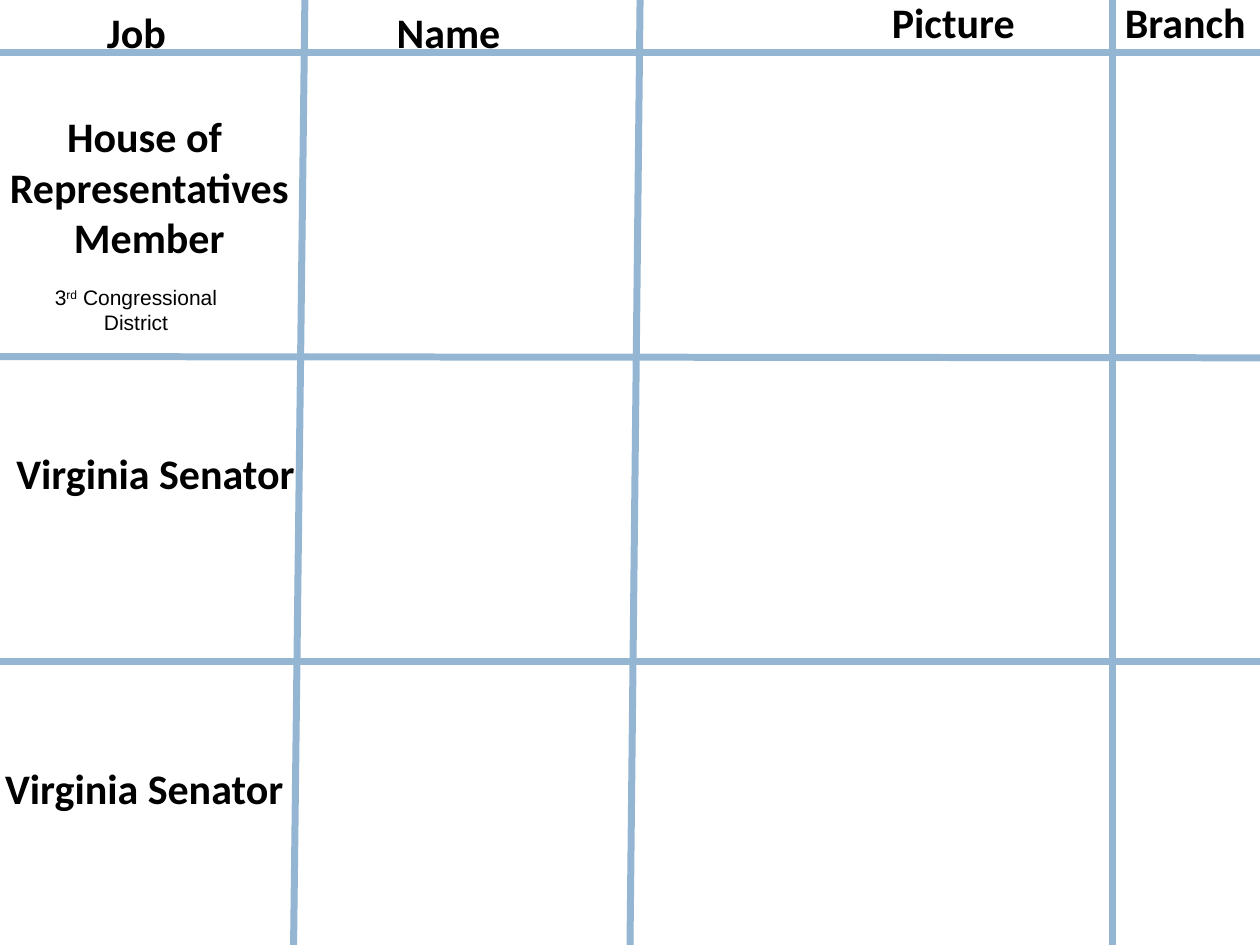
import pptx
import pptx.dml.color
import pptx.enum.shapes
import pptx.enum.text
import pptx.oxml.ns
import pptx.util
from lxml import etree

Inches = pptx.util.Inches
BLACK = pptx.dml.color.RGBColor(0x00, 0x00, 0x00)
BLUE = pptx.dml.color.RGBColor(0x94, 0xB6, 0xD2)
LEFT = pptx.enum.text.PP_ALIGN.LEFT
CENTER = pptx.enum.text.PP_ALIGN.CENTER
HEADING = {"name": "Calibri", "size": pptx.util.Pt(24), "bold": True}
DETAIL = {"name": "Arial", "size": pptx.util.Pt(12), "bold": False}


class JobChart:
    """Draws the ruled lines and labels of a job chart on one slide."""

    def __init__(self, prs):
        self.s = prs.slides.add_slide(prs.slide_layouts[6])

    def line(self, x1, y1, x2, y2):
        ends = [Inches(v) for v in (x1, y1, x2, y2)]
        c = self.s.shapes.add_connector(pptx.enum.shapes.MSO_CONNECTOR.STRAIGHT, *ends)
        c.line.color.rgb = BLUE
        c.line.width = pptx.util.Pt(4)
        etree.SubElement(c._element.spPr, pptx.oxml.ns.qn("a:effectLst"))

    def text(self, x, y, w, h, paragraphs, align=CENTER, style=HEADING, wrap=False):
        sp = self.s.shapes.add_textbox(*[Inches(v) for v in (x, y, w, h)])
        tf = sp.text_frame
        tf.word_wrap = wrap
        tf.auto_size = pptx.enum.text.MSO_AUTO_SIZE.SHAPE_TO_FIT_TEXT
        for i, runs in enumerate(paragraphs):
            p = tf.add_paragraph() if i else tf.paragraphs[0]
            p.alignment = align
            for text in runs:
                r = p.add_run()
                r.text = text
                r.font.color.rgb = BLACK
                for key, value in style.items():
                    setattr(r.font, key, value)
        return tf


def main():
    prs = pptx.Presentation()
    prs.slide_width, prs.slide_height = Inches(10), Inches(7.5)
    chart = JobChart(prs)

    for top_x, top_y, bottom_x in [(2.42, 0, 2.33), (5.08, 0, 5), (8.83, -0.04, 8.83)]:
        chart.line(top_x, top_y, bottom_x, 7.5)
    for right_y, left_y in [(0.42, 0.42), (2.84, 2.83), (5.25, 5.25)]:
        chart.line(10, right_y, 0, left_y)

    headers = [("Job", 0.75, 0, 0.68), ("Name", 3.05, 0, 1.03),
               ("Picture", 6.98, -0.08, 1.19), ("Branch", 8.83, -0.08, 1.16)]
    for name, x, y, w in headers:
        chart.text(x, y, w, 0.5, [[name]], LEFT)

    chart.text(-0.02, 0.83, 2.41, 1.31, [["House of "], ["Representatives"], ["Member"]])
    for x, y in [(0, 3.5), (-0.09, 6)]:
        chart.text(x, y, 2.47, 0.5, [["Virginia Senator"]])

    tf = chart.text(0.08, 2.21, 2, 0.5, [["3", "rd", " Congressional District"]],
                    style=DETAIL, wrap=True)
    tf.paragraphs[0].runs[1].font._element.set("baseline", "30000")

    prs.save("out.pptx")


if __name__ == "__main__":
    main()
